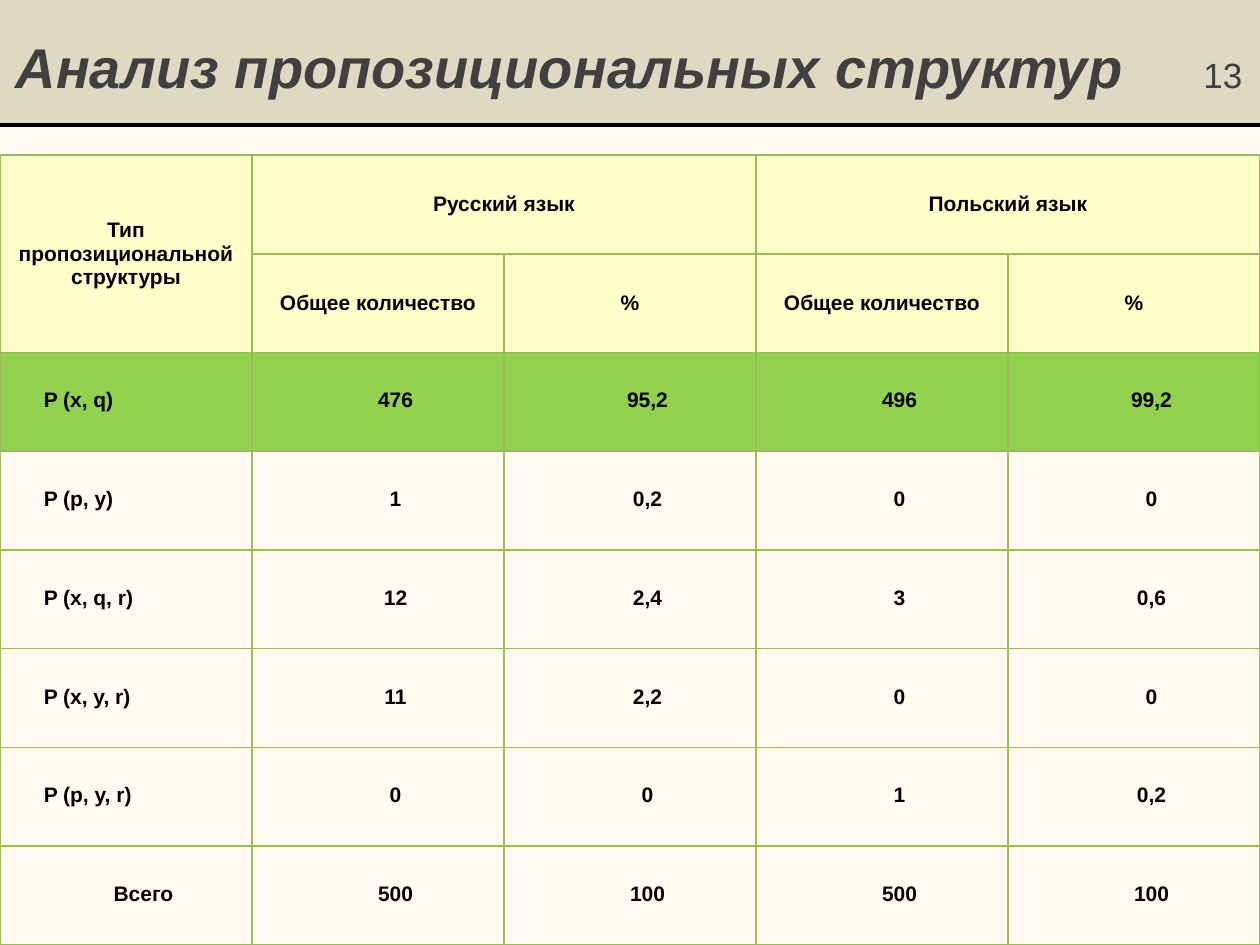
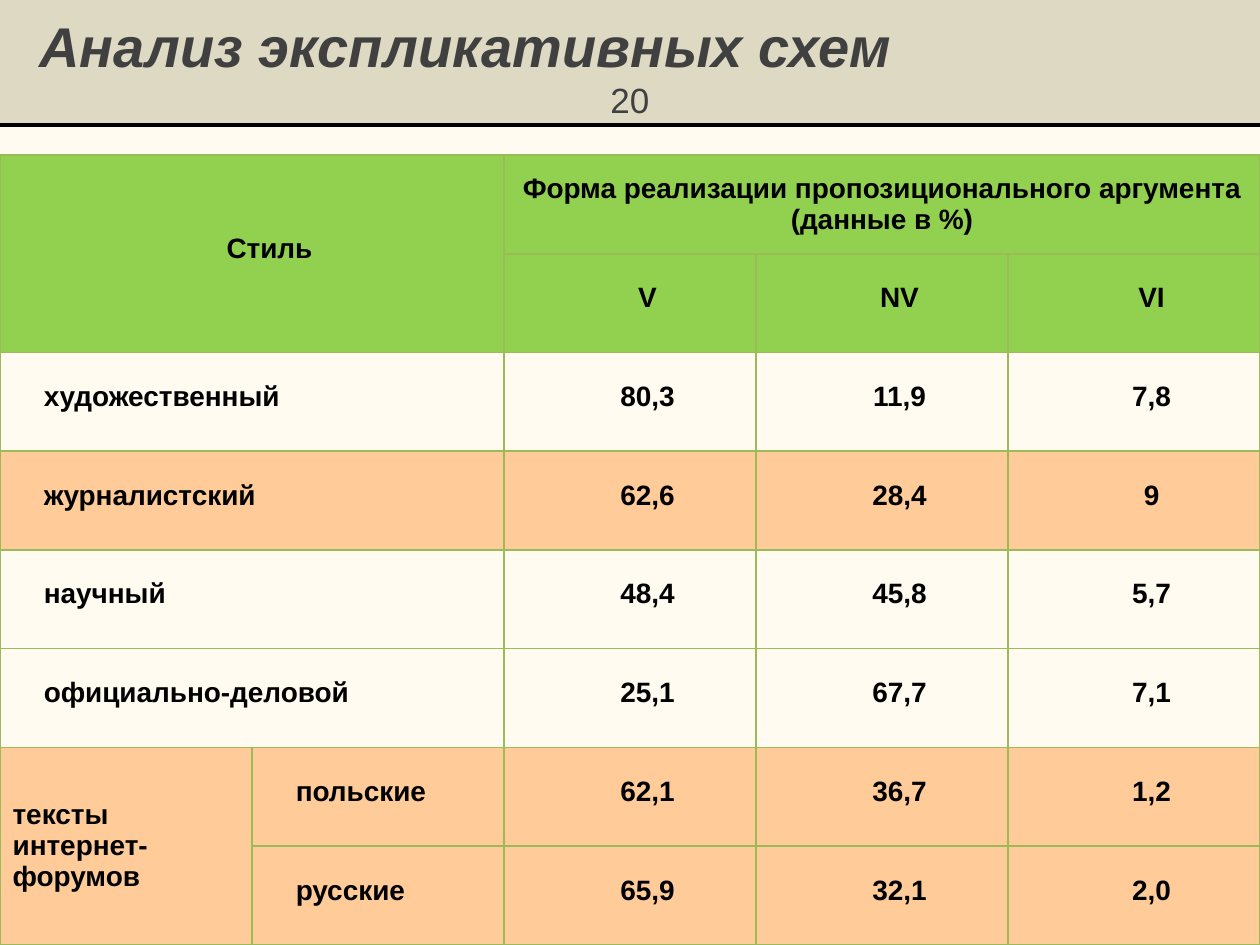
from lxml import etree
from pptx import Presentation
from pptx.dml.color import RGBColor
from pptx.enum.shapes import MSO_CONNECTOR, MSO_SHAPE
from pptx.enum.text import MSO_ANCHOR, PP_ALIGN
from pptx.oxml.ns import qn
from pptx.util import Pt

LEFT, CENTER = PP_ALIGN.LEFT, PP_ALIGN.CENTER
MIDDLE = MSO_ANCHOR.MIDDLE
RECT = MSO_SHAPE.RECTANGLE
STRAIGHT = MSO_CONNECTOR.STRAIGHT

PAPER = RGBColor(0xFF, 0xFB, 0xF0)
SAND = RGBColor(0xDD, 0xD9, 0xC3)
GRAY = RGBColor(0x40, 0x40, 0x40)
BLACK = RGBColor(0, 0, 0)
CREAM = RGBColor(0xFF, 0xFF, 0xCC)
GREEN = RGBColor(0x92, 0xD0, 0x50)
PEACH = RGBColor(0xFF, 0xCC, 0x99)
BORDER = RGBColor(0x9B, 0xBB, 0x59)

FONT = "Arial"
WIDTH, HEIGHT = 720, 540
BAND_H = 71.3
TABLE_TOP = 88.6
COL_W, ROW_H = 144, 56.43

SLIDES = [
    {
        "title": "Анализ пропозициональных структур", "number": "13",
        "number_below": False, "title_indent": 0, "size": 12,
        "rows": [
            ["Тип пропозициональной структуры", "Русский язык", "", "Польский язык", ""],
            ["", "Общее количество", "%", "Общее количество", "%"],
            ["P (x, q)", "476", "95,2", "496", "99,2"],
            ["P (p, y)", "1", "0,2", "0", "0"],
            ["P (x, q, r)", "12", "2,4", "3", "0,6"],
            ["P (x, y, r)", "11", "2,2", "0", "0"],
            ["P (p, y, r)", "0", "0", "1", "0,2"],
            ["Всего", "500", "100", "500", "100"],
        ],
        "fills": [CREAM, CREAM, GREEN, None, None, None, None, None],
        "merges": [(0, 0, 1, 0), (0, 1, 0, 2), (0, 3, 0, 4)],
        "plain": [(r, c) for r in range(2) for c in range(5)],
        "left": [(r, 0) for r in range(2, 7)],
    },
    {
        "title": "Анализ экспликативных схем", "number": "20",
        "number_below": True, "title_indent": 13.5, "size": 16,
        "rows": [
            ["Стиль", "", "Форма реализации пропозиционального аргумента (данные в %)", "", ""],
            ["", "", "V", "NV", "VI"],
            ["художественный", "", "80,3", "11,9", "7,8"],
            ["журналистский", "", "62,6", "28,4", "9"],
            ["научный", "", "48,4", "45,8", "5,7"],
            ["официально-деловой", "", "25,1", "67,7", "7,1"],
            ["тексты интернет-форумов", "польские", "62,1", "36,7", "1,2"],
            ["", "русские", "65,9", "32,1", "2,0"],
        ],
        "fills": [GREEN, GREEN, None, PEACH, None, None, PEACH, PEACH],
        "merges": [(0, 0, 1, 1), (0, 2, 0, 4), (6, 0, 7, 0)]
                  + [(r, 0, r, 1) for r in range(2, 6)],
        "plain": [(0, 2), (6, 0)],
        "left": [(r, c) for r in range(2, 8) for c in range(2)],
    },
]


def style_run(r, size, color, bold, italic=False):
    r.font.name = FONT
    r.font.size = Pt(size)
    r.font.color.rgb = color
    r.font.bold = bold
    r.font.italic = italic


def add_borders(cell):
    tcPr = cell._tc.get_or_add_tcPr()
    for side in ("a:lnL", "a:lnR", "a:lnT", "a:lnB"):
        ln = etree.SubElement(tcPr, qn(side), w=str(Pt(1)))
        fill = etree.SubElement(ln, qn("a:solidFill"))
        etree.SubElement(fill, qn("a:srgbClr"), val=str(BORDER))


prs = Presentation()
prs.slide_width, prs.slide_height = Pt(WIDTH), Pt(HEIGHT)

for data in SLIDES:
    s = prs.slides.add_slide(prs.slide_layouts[6])
    s.background.fill.solid()
    s.background.fill.fore_color.rgb = PAPER

    band = s.shapes.add_shape(RECT, 0, 0, Pt(WIDTH), Pt(BAND_H))
    band.shadow.inherit = False
    band.fill.solid()
    band.fill.fore_color.rgb = SAND
    band.line.fill.background()
    tf = band.text_frame
    tf.word_wrap = True
    tf.vertical_anchor = MIDDLE
    tf.margin_left = tf.margin_right = Pt(9)
    tf.margin_top, tf.margin_bottom = Pt(7.5), Pt(3.6)
    p = tf.paragraphs[0]
    p.text = data["title"]
    p.alignment = LEFT
    style_run(p.runs[0], 32, GRAY, True, True)
    pPr = p._p.get_or_add_pPr()
    pPr.set("marL", str(Pt(data["title_indent"])))
    if data["number_below"]:
        p = tf.add_paragraph()
        p.alignment = CENTER
        number = data["number"]
    else:
        tabs = etree.SubElement(pPr, qn("a:tabLst"))
        etree.SubElement(tabs, qn("a:tab"), pos=str(Pt(701)), algn="r")
        number = "\t" + data["number"]
    r = p.add_run()
    r.text = number
    style_run(r, 20, GRAY, False)

    rows = data["rows"]
    frame = s.shapes.add_table(len(rows), 5, 0, Pt(TABLE_TOP),
                               Pt(5 * COL_W), Pt(len(rows) * ROW_H))
    table = frame.table
    table.first_row = table.horz_banding = False
    for col in table.columns:
        col.width = Pt(COL_W)
    for i, (texts, color) in enumerate(zip(rows, data["fills"])):
        table.rows[i].height = Pt(ROW_H)
        for j, text in enumerate(texts):
            cell = table.cell(i, j)
            add_borders(cell)
            if color is None:
                cell.fill.background()
            else:
                cell.fill.solid()
                cell.fill.fore_color.rgb = color
            if not text:
                continue
            cell.vertical_anchor = MIDDLE
            p = cell.text_frame.paragraphs[0]
            p.text = text
            p.alignment = LEFT if (i, j) in data["left"] else CENTER
            style_run(p.runs[0], data["size"], BLACK, True)
            if (i, j) not in data["plain"]:
                cell.margin_left = cell.margin_right = Pt(5)
                cell.margin_top = cell.margin_bottom = 0
                p.line_spacing = Pt(12)
                p._p.get_or_add_pPr().set("indent", str(Pt(20)))
    for top, left, bottom, right in data["merges"]:
        table.cell(top, left).merge(table.cell(bottom, right))

    rule = s.shapes.add_connector(STRAIGHT, 0, Pt(BAND_H), Pt(WIDTH), Pt(BAND_H))
    rule.line.color.rgb = BLACK
    rule.line.width = Pt(2.25)
    etree.SubElement(rule._element.spPr, qn("a:effectLst"))

prs.save("out.pptx")
